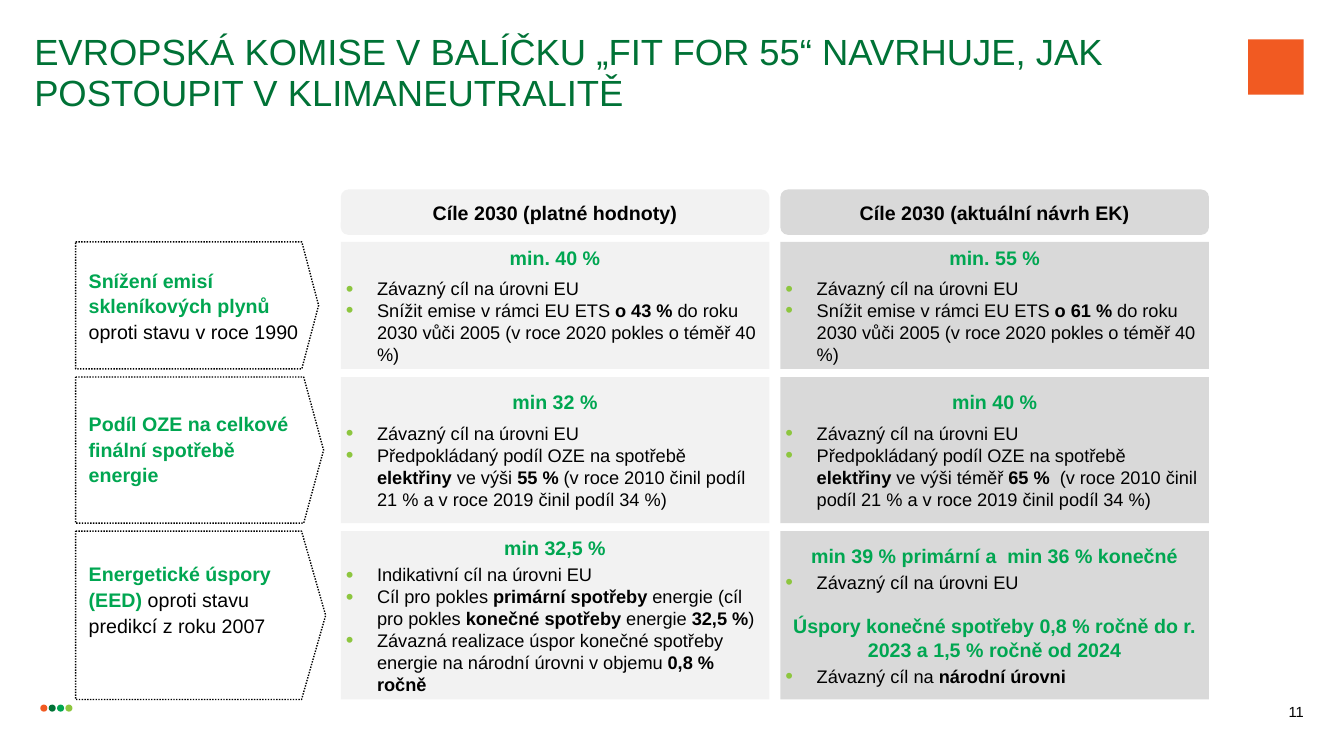
from lxml.etree import SubElement
from pptx import Presentation
from pptx.dml.color import RGBColor
from pptx.enum.dml import MSO_LINE
from pptx.enum.shapes import MSO_SHAPE
from pptx.enum.text import MSO_ANCHOR, PP_ALIGN
from pptx.oxml.ns import qn
from pptx.util import Inches, Pt

BLACK = RGBColor(0x00, 0x00, 0x00)
WHITE = RGBColor(0xFF, 0xFF, 0xFF)
DARK_GREEN = RGBColor(0x00, 0x72, 0x36)
GREEN = RGBColor(0x00, 0xA6, 0x51)
LIME = RGBColor(0x8D, 0xC6, 0x3F)
ORANGE = RGBColor(0xF1, 0x5A, 0x22)
LIGHT_GREY = RGBColor(0xF2, 0xF2, 0xF2)
MID_GREY = RGBColor(0xD9, 0xD9, 0xD9)

# Content: words between asterisks are bold
TITLE = "EVROPSKÁ KOMISE V BALÍČKU „FIT FOR 55“ NAVRHUJE, JAK POSTOUPIT V KLIMANEUTRALITĚ"
PAGE_NUMBER = "11"
COLUMNS = [
    ("Cíle 2030 (platné hodnoty)", LIGHT_GREY),
    ("Cíle 2030 (aktuální návrh EK)", MID_GREY),
]
# Each cell is a list of sections: a heading and its bullets
ROWS = [
    {
        "label": "*Snížení emisí skleníkových plynů* oproti stavu v roce 1990",
        "height": 1.26, "arrow_width": 2.41, "point": 0.132,
        "label_offset": 0.17, "label_width": 2.4, "heading_gap": 6,
        "cells": [
            [("min. 40 %", [
                "Závazný cíl na úrovni EU",
                "Snížit emise v rámci EU ETS *o 43 % *do roku 2030 vůči 2005 "
                "(v roce 2020 pokles o téměř 40 %)"])],
            [("min. 55 %", [
                "Závazný cíl na úrovni EU",
                "Snížit emise v rámci EU ETS *o 61 % *do roku 2030 vůči 2005 "
                "(v roce 2020 pokles o téměř 40 %)"])],
        ],
    },
    {
        "label": "*Podíl OZE na celkové finální spotřebě energie*",
        "height": 1.45, "arrow_width": 2.46, "point": 0.136,
        "label_offset": 0.25, "label_width": 2.29, "heading_gap": 6,
        "cells": [
            [("min 32 %", [
                "Závazný cíl na úrovni EU",
                "Předpokládaný podíl OZE na spotřebě *elektřiny* ve výši *55 % *"
                "(v roce 2010 činil podíl 21 % a v roce 2019 činil podíl 34 %)"])],
            [("min 40 %", [
                "Závazný cíl na úrovni EU",
                "Předpokládaný podíl OZE na spotřebě *elektřiny* ve výši téměř *65 %*"
                "  (v roce 2010 činil podíl 21 % a v roce 2019 činil podíl 34 %)"])],
        ],
    },
    {
        "label": "*Energetické úspory (EED)* oproti stavu predikcí z roku 2007",
        "height": 1.67, "arrow_width": 2.48, "point": 0.143,
        "label_offset": 0.21, "label_width": 2.31, "heading_gap": 3,
        "cells": [
            [("min 32,5 %", [
                "Indikativní cíl na úrovni EU",
                "Cíl pro pokles *primární spotřeby *energie (cíl pro pokles "
                "*konečné spotřeby *energie *32,5 %*)",
                "Závazná realizace úspor konečné spotřeby energie na národní úrovni "
                "v objemu *0,8 % ročně*"])],
            [("min 39 % primární a  min 36 % konečné", ["Závazný cíl na úrovni EU"]),
             ("Úspory konečné spotřeby 0,8 % ročně do r. 2023 a 1,5 % ročně od 2024",
              ["Závazný cíl na *národní úrovni*"])],
        ],
    },
]

# Grid in inches
SLIDE_WIDTH, SLIDE_HEIGHT = 13.33, 7.5
ARROW_LEFT = 0.75
COLUMN_LEFT, COLUMN_WIDTH, COLUMN_GAP = 3.38, 4.25, 0.11
HEADER_TOP, HEADER_HEIGHT = 1.88, 0.45
ROWS_TOP, ROW_GAP = 2.4, 0.08
SECTION_GAP = 15
BULLET_INDENT = 0.31

presentation = Presentation()
presentation.slide_width = Inches(SLIDE_WIDTH)
presentation.slide_height = Inches(SLIDE_HEIGHT)
slide = presentation.slides.add_slide(presentation.slide_layouts[6])


def add_block(kind, left, top, width, height, fill):
    shape = slide.shapes.add_shape(
        kind, Inches(left), Inches(top), Inches(width), Inches(height))
    shape.shadow.inherit = False
    shape.fill.solid()
    shape.fill.fore_color.rgb = fill
    shape.line.fill.background()
    return shape


def add_box(left, top, width, height):
    return slide.shapes.add_textbox(
        Inches(left), Inches(top), Inches(width), Inches(height))


def prepare_frame(shape, inset=(0, 0), anchor=MSO_ANCHOR.TOP):
    frame = shape.text_frame
    frame.word_wrap = True
    frame.vertical_anchor = anchor
    frame.margin_left = frame.margin_right = Inches(inset[0])
    frame.margin_top = frame.margin_bottom = Inches(inset[1])
    return frame


def write_text(frame, text, size=14, color=BLACK, strong_color=None, bold=False,
               align=PP_ALIGN.LEFT, line_spacing=1.0, before=0, after=0, bullet=False):
    paragraph = frame.paragraphs[0]
    if paragraph.runs:
        paragraph = frame.add_paragraph()
    if bullet:
        add_bullet(paragraph)
    paragraph.alignment = align
    paragraph.line_spacing = line_spacing
    paragraph.space_before, paragraph.space_after = Pt(before), Pt(after)
    for index, piece in enumerate(text.split("*")):
        if not piece:
            continue
        strong = index % 2 == 1
        run = paragraph.add_run()
        run.text = piece
        run.font.name = "Arial"
        run.font.size = Pt(size)
        run.font.bold = bold or strong
        run.font.color.rgb = strong_color if strong and strong_color else color


def add_bullet(paragraph):
    properties = paragraph._p.get_or_add_pPr()
    properties.set("marL", str(Inches(BULLET_INDENT)))
    properties.set("indent", str(-Inches(BULLET_INDENT)))
    bullet_color = SubElement(properties, qn("a:buClr"))
    SubElement(bullet_color, qn("a:srgbClr"), val=str(LIME))
    SubElement(properties, qn("a:buSzPct"), val="120000")
    SubElement(properties, qn("a:buFont"), typeface="Arial")
    SubElement(properties, qn("a:buChar"), char="•")


# Title, brand square and row of dots
title_frame = prepare_frame(add_box(0.34, 0.32, 11.8, 0.9))
write_text(title_frame, TITLE, size=26, color=DARK_GREEN, line_spacing=0.95)
add_block(MSO_SHAPE.RECTANGLE, 12.38, 0.39, 0.55, 0.55, ORANGE)
for index, dot_color in enumerate([ORANGE, DARK_GREEN, GREEN, LIME]):
    add_block(MSO_SHAPE.OVAL, 0.4 + index * 0.083, 6.99, 0.07, 0.07, dot_color)

# Column headers
column_lefts = [COLUMN_LEFT + index * (COLUMN_WIDTH + COLUMN_GAP)
                for index in range(len(COLUMNS))]
for left, (header, fill) in zip(column_lefts, COLUMNS):
    block = add_block(MSO_SHAPE.ROUNDED_RECTANGLE, left, HEADER_TOP,
                      COLUMN_WIDTH, HEADER_HEIGHT, fill)
    header_frame = prepare_frame(block, (0.11, 0.06), MSO_ANCHOR.MIDDLE)
    write_text(header_frame, header, bold=True, align=PP_ALIGN.CENTER)

# Rows: arrow with label, then one cell per column
top = ROWS_TOP
for row in ROWS:
    arrow = add_block(MSO_SHAPE.PENTAGON, ARROW_LEFT, top,
                      row["arrow_width"], row["height"], WHITE)
    arrow.adjustments[0] = row["point"]
    arrow.line.color.rgb = BLACK
    arrow.line.width = Pt(1)
    arrow.line.dash_style = MSO_LINE.ROUND_DOT
    label_box = add_box(ARROW_LEFT, top + row["label_offset"], row["label_width"], 0.89)
    write_text(prepare_frame(label_box, (0.13, 0.07)), row["label"],
               strong_color=GREEN, line_spacing=1.1)

    for left, (_, fill), sections in zip(column_lefts, COLUMNS, row["cells"]):
        cell = add_block(MSO_SHAPE.RECTANGLE, left, top, COLUMN_WIDTH, row["height"], fill)
        cell_frame = prepare_frame(cell, (0.05, 0.05), MSO_ANCHOR.MIDDLE)
        for index, (heading, bullets) in enumerate(sections):
            write_text(cell_frame, heading, color=GREEN, bold=True, align=PP_ALIGN.CENTER,
                       before=SECTION_GAP if index else 0, after=row["heading_gap"])
            for text in bullets:
                write_text(cell_frame, text, size=13, bullet=True)
    top += row["height"] + ROW_GAP

# Page number
number_frame = prepare_frame(add_box(12.38, 6.86, 0.55, 0.4), anchor=MSO_ANCHOR.MIDDLE)
write_text(number_frame, PAGE_NUMBER, size=10.5, align=PP_ALIGN.RIGHT)

presentation.save("out.pptx")
